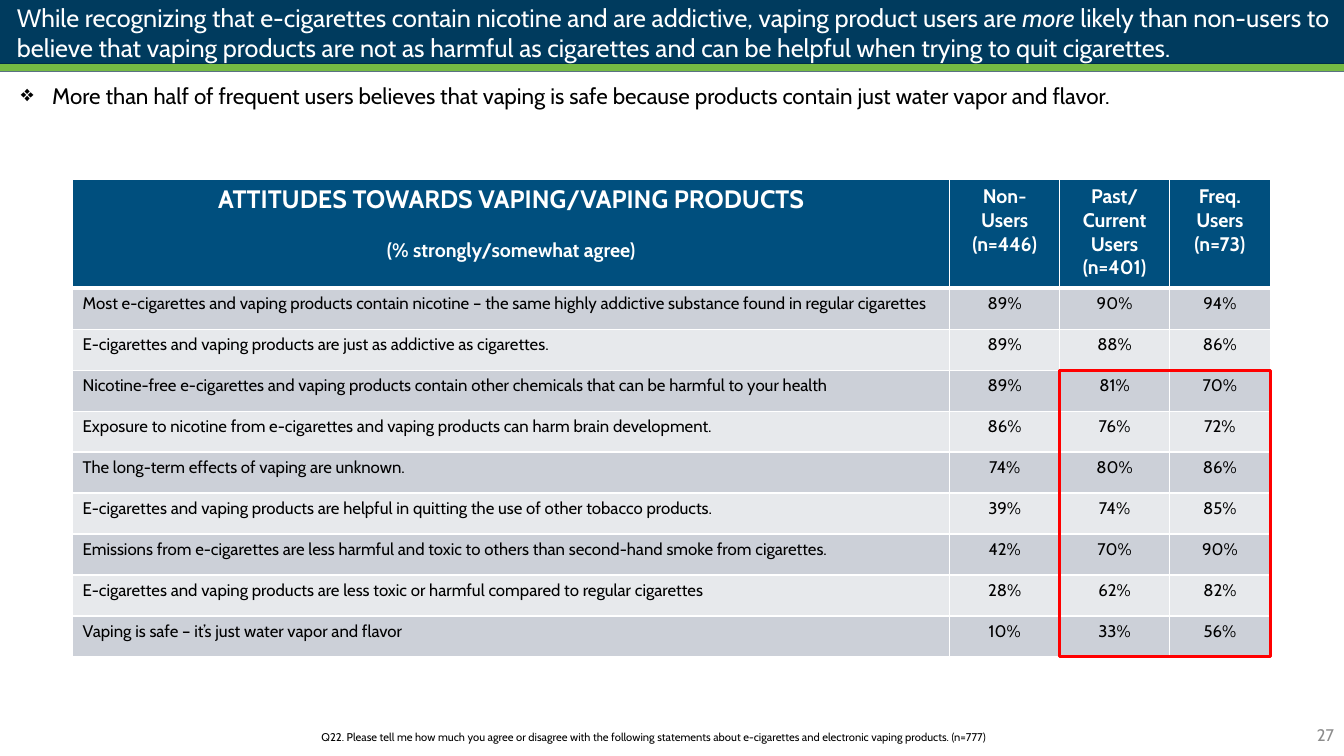
from lxml import etree
from pptx import Presentation
from pptx.dml.color import RGBColor
from pptx.enum.shapes import MSO_CONNECTOR, MSO_SHAPE
from pptx.enum.text import MSO_ANCHOR, PP_ALIGN
from pptx.oxml.ns import qn
from pptx.util import Inches, Pt

RECTANGLE = MSO_SHAPE.RECTANGLE
STRAIGHT = MSO_CONNECTOR.STRAIGHT
TOP, MIDDLE = MSO_ANCHOR.TOP, MSO_ANCHOR.MIDDLE
LEFT, CENTER, RIGHT = PP_ALIGN.LEFT, PP_ALIGN.CENTER, PP_ALIGN.RIGHT

COLORS = {
    "white": "FFFFFF", "black": "000000", "gray": "8C8C8C",
    "banner_edge": "00273F", "banner": "003B5E", "green": "75BA43",
    "header": "004F7E", "band_dark": "CCD0D8", "band_light": "E7E9EC",
    "highlight": "FF0000",
}

TITLE = (
    "While recognizing that e-cigarettes contain nicotine and are addictive, "
    "vaping product users are ",
    "more",
    " likely than non-users to believe that vaping products are not as harmful "
    "as cigarettes and can be helpful when trying to quit cigarettes.",
)
TAKEAWAY = ("More than half of frequent users believes that vaping is safe "
            "because products contain just water vapor and flavor.")
QUESTION = ("Q22. Please tell me how much you agree or disagree with the following "
            "statements about e-cigarettes and electronic vaping products. (n=777)")
HEADINGS = [
    ("ATTITUDES TOWARDS VAPING/VAPING PRODUCTS", "(% strongly/somewhat agree)"),
    ("Non-Users", "(n=446)"),
    ("Past/Current Users", "(n=401)"),
    ("Freq. Users", "(n=73)"),
]
ATTITUDES = [
    ("Most e-cigarettes and vaping products contain nicotine – the same highly "
     "addictive substance found in regular cigarettes", 89, 90, 94),
    ("E-cigarettes and vaping products are just as addictive as cigarettes.",
     89, 88, 86),
    ("Nicotine-free e-cigarettes and vaping products contain other chemicals "
     "that can be harmful to your health", 89, 81, 70),
    ("Exposure to nicotine from e-cigarettes and vaping products can harm brain "
     "development.", 86, 76, 72),
    ("The long-term effects of vaping are unknown.", 74, 80, 86),
    ("E-cigarettes and vaping products are helpful in quitting the use of other "
     "tobacco products.", 39, 74, 85),
    ("Emissions from e-cigarettes are less harmful and toxic to others than "
     "second-hand smoke from cigarettes.", 42, 70, 90),
    ("E-cigarettes and vaping products are less toxic or harmful compared to "
     "regular cigarettes", 28, 62, 82),
    ("Vaping is safe – it’s just water vapor and flavor", 10, 33, 56),
]
COLUMN_WIDTHS = [8.7, 1.09, 1.09, 1]
HEADER_HEIGHT = 1.08
BODY_HEIGHT = 3.66


def rgb(color):
    return RGBColor.from_string(COLORS[color])


class SlideBuilder:
    font = "Cabin"

    def __init__(self, slide):
        self.slide = slide

    def style(self, paragraph, size, color, align=LEFT, bold=False):
        paragraph.alignment = align
        for run in paragraph.runs:
            run.font.name = self.font
            run.font.size = Pt(size)
            run.font.bold = bold
            run.font.color.rgb = rgb(color)

    def rectangle(self, box, fill=None, line=None, weight=0):
        shape = self.slide.shapes.add_shape(RECTANGLE, *map(Inches, box))
        shape.shadow.inherit = False
        if fill:
            shape.fill.solid()
            shape.fill.fore_color.rgb = rgb(fill)
        else:
            shape.fill.background()
        if line:
            shape.line.color.rgb = rgb(line)
            shape.line.width = Pt(weight)
        else:
            shape.line.fill.background()

    def rule(self, y, width, color, weight):
        line = self.slide.shapes.add_connector(
            STRAIGHT, 0, Inches(y), Inches(width), Inches(y))
        line.line.color.rgb = rgb(color)
        line.line.width = Pt(weight)
        etree.SubElement(line._element.spPr, qn("a:effectLst"))

    def text(self, box, parts, size, color, align=LEFT, anchor=TOP, bullet=None):
        """Write one paragraph; every second part is italic."""
        frame = self.slide.shapes.add_textbox(*map(Inches, box)).text_frame
        frame.word_wrap = True
        frame.vertical_anchor = anchor
        paragraph = frame.paragraphs[0]
        if bullet:
            properties = paragraph._p.get_or_add_pPr()
            indent = Inches(0.31)
            properties.set("marL", str(indent))
            properties.set("indent", str(-indent))
            etree.SubElement(properties, qn("a:buChar"), char=bullet)
        for index, part in enumerate(parts):
            run = paragraph.add_run()
            run.text = part
            run.font.italic = index % 2 == 1
        self.style(paragraph, size, color, align)

    def borders(self, cell, **weights):
        """Draw white cell borders; weights are keyed by side: L, R, T, B."""
        properties = cell._tc.get_or_add_tcPr()
        for index, (side, weight) in enumerate(weights.items()):
            line = etree.Element(qn(f"a:ln{side}"), w=str(Pt(weight)))
            fill = etree.SubElement(line, qn("a:solidFill"))
            etree.SubElement(fill, qn("a:srgbClr"), val=COLORS["white"])
            properties.insert(index, line)

    def cell(self, cell, lines, sizes, fill, color, align, bold=False, top=1, bottom=1):
        cell.fill.solid()
        cell.fill.fore_color.rgb = rgb(fill)
        self.borders(cell, L=1, R=1, T=top, B=bottom)
        cell.text_frame.text = "\n".join(lines)
        for paragraph, size in zip(cell.text_frame.paragraphs, sizes):
            self.style(paragraph, size, color, align, bold)

    def attitude_table(self, left, top):
        row_count = len(ATTITUDES) + 1
        table = self.slide.shapes.add_table(
            row_count, len(HEADINGS), Inches(left), Inches(top),
            Inches(sum(COLUMN_WIDTHS)), Inches(HEADER_HEIGHT + BODY_HEIGHT)).table
        for column, width in zip(table.columns, COLUMN_WIDTHS):
            column.width = Inches(width)
        for row in table.rows:
            row.height = Inches(BODY_HEIGHT / len(ATTITUDES))
        table.rows[0].height = Inches(HEADER_HEIGHT)

        for column, heading in enumerate(HEADINGS):
            sizes = (14, 14) if column else (18, 14)
            self.cell(table.cell(0, column), heading, sizes, "header", "white",
                      CENTER, bold=True, bottom=3)
        table.cell(0, 0).text_frame.paragraphs[1].space_before = Pt(17)

        for row, (statement, *shares) in enumerate(ATTITUDES, start=1):
            fill = "band_dark" if row % 2 else "band_light"
            top_weight = 3 if row == 1 else 1
            self.cell(table.cell(row, 0), [statement], [12], fill, "black", LEFT,
                      top=top_weight)
            for column, share in enumerate(shares, start=1):
                self.cell(table.cell(row, column), [f"{share}%"], [12], fill,
                          "black", CENTER, top=top_weight)


def main():
    deck = Presentation()
    deck.slide_width, deck.slide_height = Inches(13.33), Inches(7.5)
    page = SlideBuilder(deck.slides.add_slide(deck.slide_layouts[6]))

    page.rectangle((0, 0, 13.33, 0.71), fill="banner_edge")
    page.text((0.11, 0.77, 12.84, 1.18), [TAKEAWAY], 16, "black", bullet="❖")
    page.rectangle((0, 0, 13.33, 0.63), fill="banner")
    page.text((0.07, -0.03, 13.22, 0.71), TITLE, 18, "white")
    page.text((3.09, 7.2, 6.89, 0.24), [QUESTION], 8, "black")
    page.text((10.33, 7.09, 3, 0.4), ["27"], 12, "gray", RIGHT, MIDDLE)
    page.rule(0.67, 13.33, "green", 4.5)
    page.attitude_table(0.72, 1.78)
    page.rectangle((10.51, 3.68, 2.09, 2.83), line="highlight", weight=2.25)

    deck.save("out.pptx")


if __name__ == "__main__":
    main()
